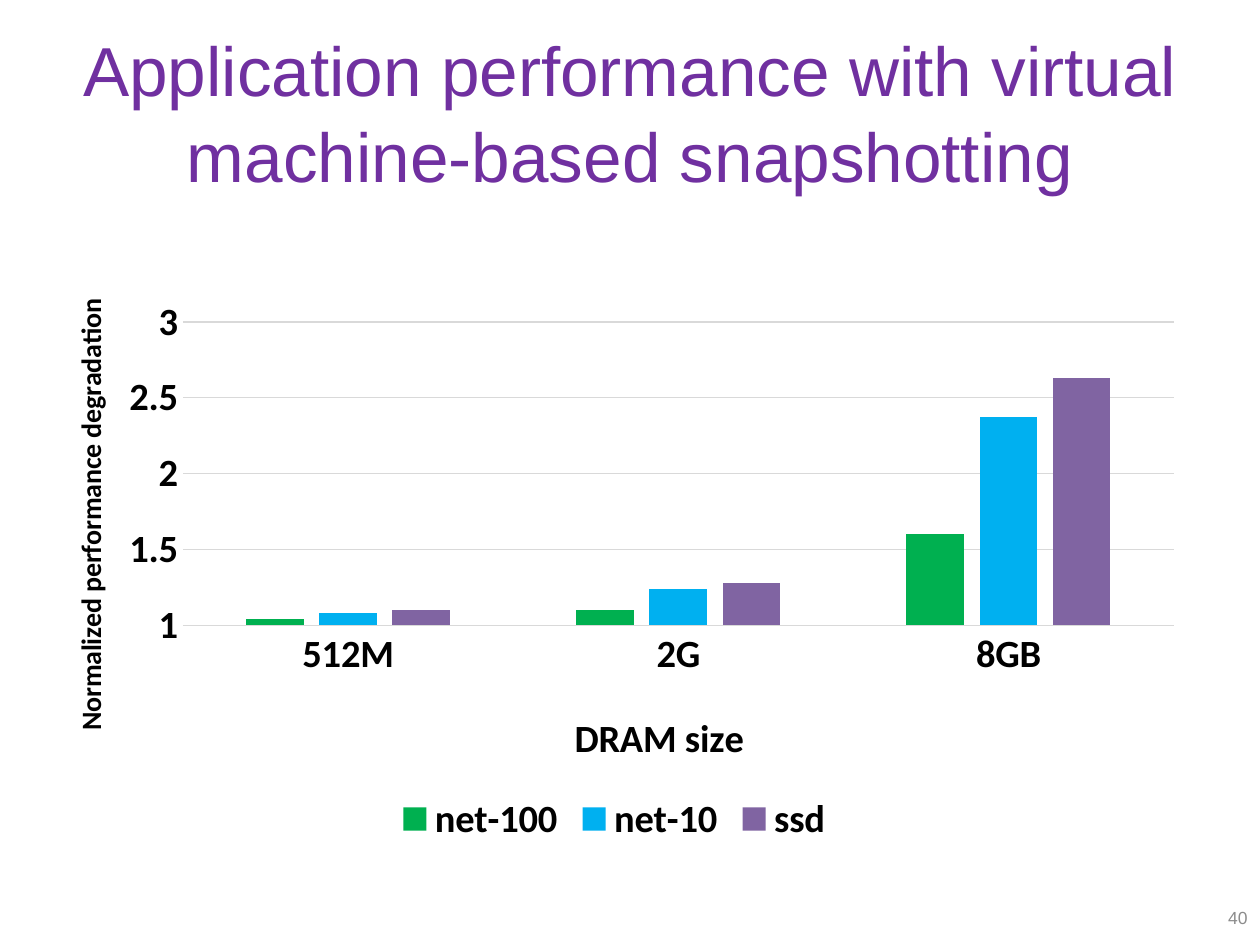
from dataclasses import dataclass

from pptx import Presentation
from pptx.chart.data import CategoryChartData
from pptx.dml.color import RGBColor
from pptx.enum.chart import XL_CHART_TYPE, XL_LEGEND_POSITION, XL_TICK_MARK
from pptx.enum.text import MSO_ANCHOR, MSO_AUTO_SIZE, PP_ALIGN
from pptx.oxml import parse_xml
from pptx.oxml.ns import nsdecls
from pptx.util import Inches, Pt

WIDTH, HEIGHT = Inches(10), Inches(7.5)
TITLE_ONLY = 5
BLACK, GRID = "000000", "D9D9D9"


@dataclass(frozen=True)
class Frame:
    """A rectangle in shares of the slide's size."""
    left: float
    top: float
    width: float
    height: float

    def lengths(self):
        return (round(self.left * WIDTH), round(self.top * HEIGHT),
                round(self.width * WIDTH), round(self.height * HEIGHT))


@dataclass(frozen=True)
class Device:
    name: str
    values: tuple
    color: str


CATEGORIES = ("512M", "2G", "8GB")
DEVICES = (
    Device("net-100", (1.04, 1.1, 1.6), "00B050"),
    Device("net-10", (1.08, 1.24, 2.37), "00B0F0"),
    Device("ssd", (1.1, 1.28, 2.63), "8064A2"),
)


def set_all(target, values: dict) -> None:
    for name, value in values.items():
        setattr(target, name, value)


def set_font(font, name: str, size: float, color: str, bold: bool = False) -> None:
    set_all(font, {"name": name, "size": Pt(size), "bold": bold})
    font.color.rgb = RGBColor.from_string(color)


def write(shape, text: str, align, size: float, color: str):
    frame = shape.text_frame
    set_all(frame, {"word_wrap": True, "auto_size": MSO_AUTO_SIZE.NONE,
                    "vertical_anchor": MSO_ANCHOR.MIDDLE})
    para = frame.paragraphs[0]
    para.alignment = align
    span = para.add_run()
    span.text = text
    set_font(span.font, "Arial", size, color)
    return para


def layout_xml(inner: bool = False, **shares: float):
    """Manual layout in shares of the chart's size."""
    target = '<c:layoutTarget val="inner"/>' if inner else ""
    modes = "".join(f'<c:{key}Mode val="edge"/>' for key in "xy")
    sizes = "".join(f'<c:{key} val="{share}"/>' for key, share in shares.items())
    return parse_xml(f'<c:layout {nsdecls("c")}><c:manualLayout>{target}{modes}{sizes}'
                     '</c:manualLayout></c:layout>')


def format_axis(axis, title: str, size: float, x: float, y: float) -> None:
    set_all(axis, {"major_tick_mark": XL_TICK_MARK.NONE,
                   "minor_tick_mark": XL_TICK_MARK.NONE})
    set_font(axis.tick_labels.font, "Calibri", 22, BLACK, True)
    para = axis.axis_title.text_frame.paragraphs[0]
    span = para.add_run()
    span.text = title
    set_font(span.font, "Calibri", size, BLACK, True)
    element = axis.axis_title._element
    for old in element.findall("{*}layout"):
        element.remove(old)
    element.find("{*}tx").addnext(layout_xml(x=x, y=y))


def draw_line(line) -> None:
    line.color.rgb = RGBColor.from_string(GRID)
    line.width = Pt(0.75)


def add_degradation_chart(page, frame: Frame) -> None:
    data = CategoryChartData()
    data.categories = CATEGORIES
    for device in DEVICES:
        data.add_series(device.name, device.values)
    chart = page.shapes.add_chart(XL_CHART_TYPE.COLUMN_CLUSTERED, *frame.lengths(), data).chart
    set_all(chart, {"has_title": False, "has_legend": True})
    set_font(chart.font, "Calibri", 10, BLACK)

    # Columns
    plot = chart.plots[0]
    set_all(plot, {"gap_width": 219, "overlap": -27, "vary_by_categories": False})
    for series, device in zip(plot.series, DEVICES):
        series.format.fill.solid()
        series.format.fill.fore_color.rgb = RGBColor.from_string(device.color)

    # Axes
    format_axis(chart.category_axis, "DRAM size", 22, 0.46, 0.74)
    draw_line(chart.category_axis.format.line)
    values = chart.value_axis
    format_axis(values, "Normalized performance degradation", 16, 0.03, 0.01)
    set_all(values, {"minimum_scale": 1, "maximum_scale": 3, "major_unit": 0.5})
    values.format.line.fill.background()
    draw_line(values.major_gridlines.format.line)

    # Plot area and legend
    area = chart._chartSpace.chart.plotArea
    for old in area.findall("{*}layout"):
        area.remove(old)
    area.insert(0, layout_xml(inner=True, x=0.13, y=0.06, w=0.85, h=0.54))
    set_all(chart.legend, {"position": XL_LEGEND_POSITION.BOTTOM, "include_in_layout": False})
    set_font(chart.legend.font, "Calibri", 22, BLACK, True)


def main() -> None:
    deck = Presentation()
    set_all(deck, {"slide_width": WIDTH, "slide_height": HEIGHT})
    page = deck.slides.add_slide(deck.slide_layouts[TITLE_ONLY])

    # Title
    title = page.shapes.title
    names = ("left", "top", "width", "height")
    set_all(title, dict(zip(names, Frame(0.025, 0.033, 0.95, 0.167).lengths())))
    para = write(title, "Application performance with virtual machine-based snapshotting",
                 PP_ALIGN.CENTER, 39.6, "7030A0")
    para.line_spacing = 1.04

    # Chart
    add_degradation_chart(page, Frame(0.025, 0.305, 0.925, 0.595))

    # Page number
    box = page.shapes.add_textbox(*Frame(0.767, 0.944, 0.233, 0.053).lengths())
    write(box, "40", PP_ALIGN.RIGHT, 10, "8C8C8C")

    deck.save("out.pptx")


if __name__ == "__main__":
    main()
